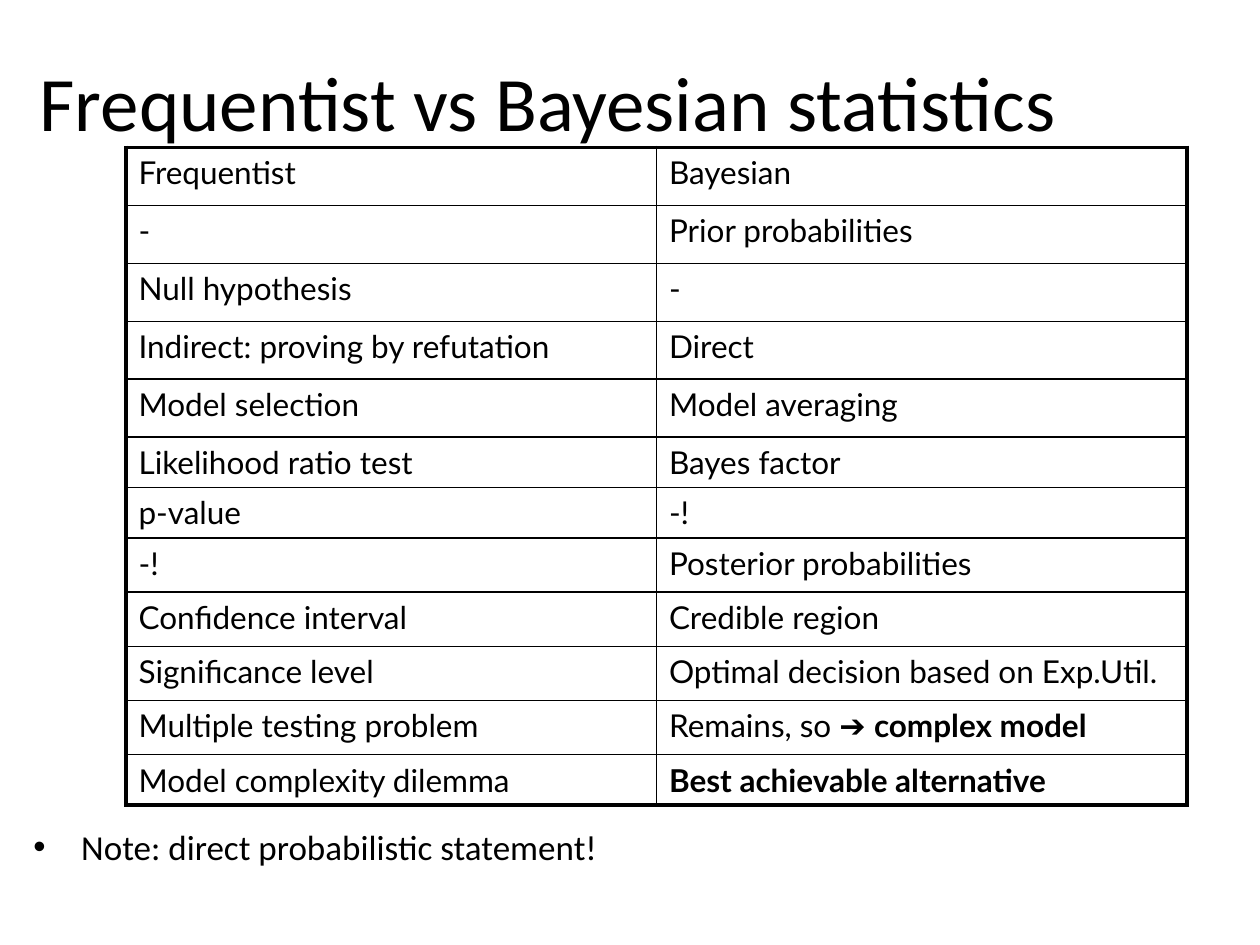
from lxml import etree
from pptx import Presentation
from pptx import util as u
from pptx.dml.color import RGBColor
from pptx.enum import text
from pptx.oxml import ns

BLACK = RGBColor(0, 0, 0)
WIDTH, HEIGHT = u.Inches(10), u.Inches(7.5)
THIN, THICK = u.Pt(1), u.Pt(2.25)
COLUMN_WIDTH = u.Inches(4.21)
ROW_HEIGHTS = [0.46] * 5 + [0.4] * 2 + [0.43] * 4 + [0.4]

# A cell is a list of (wording, bold) spans or one plain string.
ROWS = [
    ("Frequentist", "Bayesian"),
    ("-", "Prior probabilities"),
    ("Null hypothesis", "-"),
    ("Indirect: proving by refutation", "Direct"),
    ("Model selection", "Model averaging"),
    ("Likelihood ratio test", "Bayes factor"),
    ("p-value", "-!"),
    ("-!", "Posterior probabilities"),
    ("Confidence interval", "Credible region"),
    ("Significance level", "Optimal decision based on Exp.Util."),
    ("Multiple testing problem",
     [("Remains, so ➔ ", False), ("complex model", True)]),
    ("Model complexity dilemma", [("Best achievable alternative", True)]),
]


def add_child(parent, tag, **attributes):
    return etree.SubElement(parent, ns.qn(tag), attributes)


def write(para, content, size, font="Calibri", align=text.PP_ALIGN.LEFT,
          space_share=0, bullet=None, indent=0):
    """Fill a paragraph; space_share is the space before in percent of a line."""
    para.alignment = align
    props = para._p.get_or_add_pPr()
    if space_share:
        before = add_child(props, "a:spcBef")
        add_child(before, "a:spcPct", val=str(space_share * 1000))
    if bullet:
        props.set("marL", str(indent))
        props.set("indent", str(-indent))
        add_child(props, "a:buFont", typeface="Arial")
        add_child(props, "a:buChar", char=bullet)
    spans = [(content, False)] if isinstance(content, str) else content
    for wording, bold in spans:
        span = para.add_run()
        span.text = wording
        span.font.name = font
        span.font.size = u.Pt(size)
        span.font.bold = bold
        span.font.color.rgb = BLACK


def add_text(page, content, left, top, width, height, anchor, **style):
    """Add a text box placed by shares of the slide's size."""
    box = page.shapes.add_textbox(int(WIDTH * left), int(HEIGHT * top),
                                  int(WIDTH * width), int(HEIGHT * height))
    box.text_frame.word_wrap = True
    box.text_frame.vertical_anchor = anchor
    write(box.text_frame.paragraphs[0], content, **style)


def set_borders(cell, **widths):
    props = cell._tc.get_or_add_tcPr()
    for side in "LRTB":
        line = add_child(props, f"a:ln{side}", w=str(widths[side]))
        fill = add_child(line, "a:solidFill")
        add_child(fill, "a:srgbClr", val=str(BLACK))


def add_comparison(page, left, top):
    row_count, column_count = len(ROWS), len(ROWS[0])
    table = page.shapes.add_table(
        row_count, column_count, int(WIDTH * left), int(HEIGHT * top),
        COLUMN_WIDTH * column_count, u.Inches(sum(ROW_HEIGHTS))).table
    table.first_row = table.horz_banding = False
    for column in table.columns:
        column.width = COLUMN_WIDTH
    for r, (contents, height) in enumerate(zip(ROWS, ROW_HEIGHTS)):
        table.rows[r].height = u.Inches(height)
        for c, content in enumerate(contents):
            cell = table.cell(r, c)
            set_borders(cell,
                        L=THICK if c == 0 else THIN,
                        R=THICK if c == column_count - 1 else THIN,
                        T=THICK if r == 0 else THIN,
                        B=THICK if r == row_count - 1 else THIN)
            cell.fill.background()
            write(cell.text_frame.paragraphs[0], content, 18, font="Lato",
                  space_share=20)


def main():
    deck = Presentation()
    deck.slide_width, deck.slide_height = WIDTH, HEIGHT
    page = deck.slides.add_slide(deck.slide_layouts[6])
    add_text(page, "Frequentist vs Bayesian statistics", 0, 1 / 15, 0.87, 0.08,
             text.MSO_ANCHOR.MIDDLE, size=44, align=text.PP_ALIGN.CENTER)
    add_text(page, "Note: direct probabilistic statement!", 1 / 60, 13 / 15,
             0.97, 0.12, text.MSO_ANCHOR.TOP, size=20, space_share=20,
             bullet="•", indent=u.Inches(0.38))
    add_comparison(page, 0.1, 0.156)
    deck.save("out.pptx")


if __name__ == "__main__":
    main()
